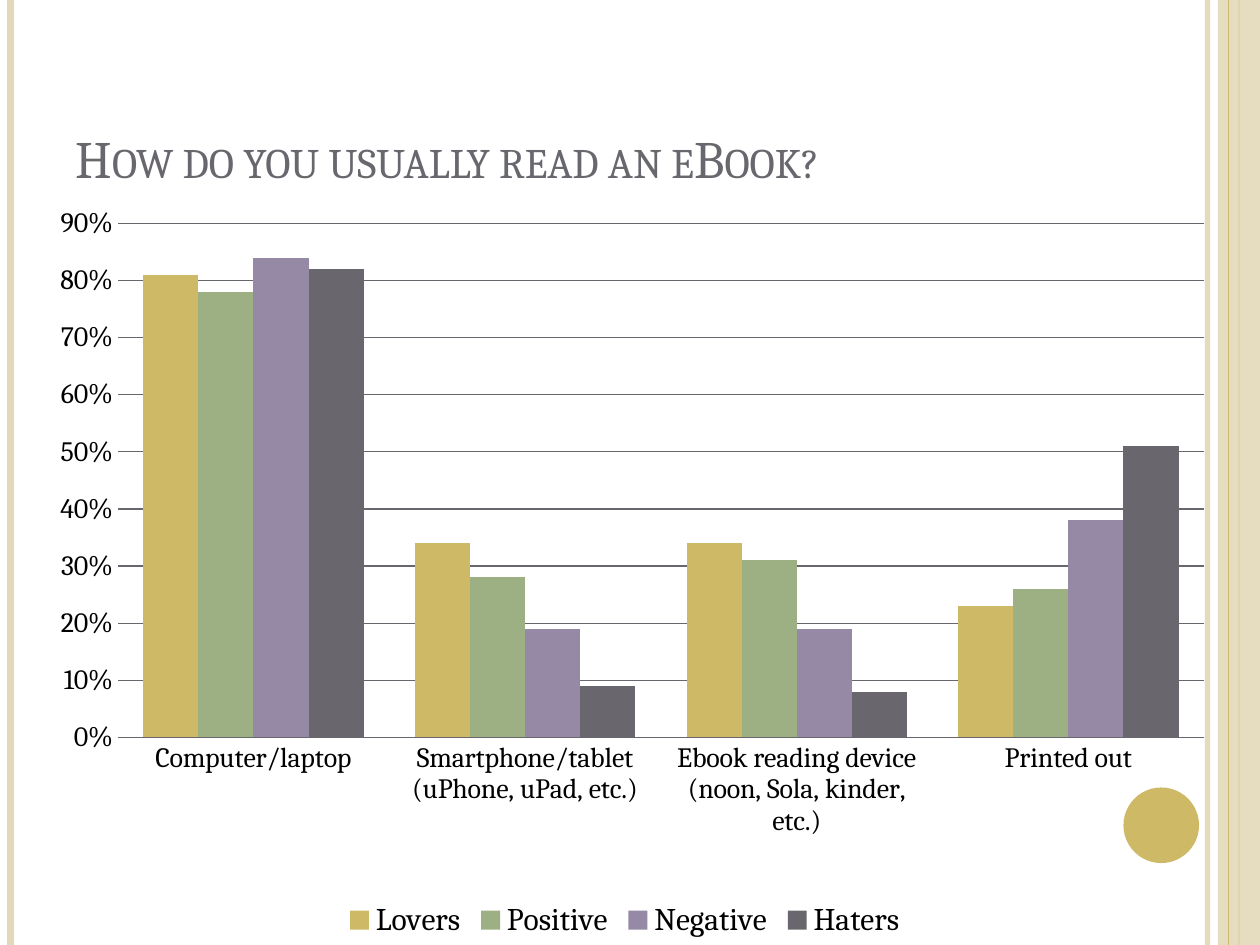
from dataclasses import dataclass

from lxml import etree
from pptx import Presentation
from pptx.chart.data import CategoryChartData
from pptx.dml.color import RGBColor
from pptx.enum.chart import XL_CHART_TYPE, XL_LEGEND_POSITION, XL_TICK_MARK
from pptx.enum.shapes import MSO_CONNECTOR, MSO_SHAPE
from pptx.enum.text import MSO_ANCHOR, MSO_AUTO_SIZE, PP_ALIGN
from pptx.oxml.ns import qn
from pptx.util import Pt

COLUMN = XL_CHART_TYPE.COLUMN_CLUSTERED
BOTTOM = XL_LEGEND_POSITION.BOTTOM
NO_TICK = XL_TICK_MARK.NONE
STRAIGHT = MSO_CONNECTOR.STRAIGHT
RECT, OVAL = MSO_SHAPE.RECTANGLE, MSO_SHAPE.OVAL
ANCHOR_BOTTOM = MSO_ANCHOR.BOTTOM
NO_AUTOSIZE = MSO_AUTO_SIZE.NONE
LEFT = PP_ALIGN.LEFT

WIDTH, HEIGHT = 720, 540


@dataclass(frozen=True)
class Theme:
    font: str = "Cambria"
    sand: str = "E3D9B8"
    gold: str = "CEB966"
    green: str = "9CB084"
    purple: str = "9689A6"
    gray: str = "69676D"
    black: str = "000000"
    title_size: int = 30
    axis_size: int = 16
    legend_size: int = 18


def rgb(value):
    return RGBColor.from_string(value)


def set_opacity(fill_parent, percent):
    for color in fill_parent.iter(qn("a:srgbClr")):
        etree.SubElement(color, qn("a:alpha"), val=str(percent * 1000))


class SlideBuilder:
    def __init__(self, slide, theme):
        self.s = slide
        self.theme = theme

    def style_font(self, font, size, color):
        font.name = self.theme.font
        font.size = Pt(size)
        font.color.rgb = rgb(color)

    def vertical_line(self, x, color, weight, opacity=100):
        line = self.s.shapes.add_connector(STRAIGHT, Pt(x), Pt(0), Pt(x), Pt(HEIGHT))
        line.line.color.rgb = rgb(color)
        line.line.width = Pt(weight)
        sp_pr = line.element.spPr
        if opacity < 100:
            set_opacity(sp_pr, opacity)
        etree.SubElement(sp_pr, qn("a:effectLst"))

    def shape(self, kind, x, y, w, h, color, opacity=100):
        sp = self.s.shapes.add_shape(kind, Pt(x), Pt(y), Pt(w), Pt(h))
        sp.shadow.inherit = False
        sp.fill.solid()
        sp.fill.fore_color.rgb = rgb(color)
        sp.line.fill.background()
        if opacity < 100:
            set_opacity(sp.element.spPr, opacity)

    def title(self, text, x, y, w, h):
        sp = self.s.shapes.title
        sp.left, sp.top, sp.width, sp.height = Pt(x), Pt(y), Pt(w), Pt(h)
        tf = sp.text_frame
        tf.word_wrap = True
        tf.auto_size = NO_AUTOSIZE
        tf.vertical_anchor = ANCHOR_BOTTOM
        p = tf.paragraphs[0]
        p.alignment = LEFT
        r = p.add_run()
        r.text = text
        self.style_font(r.font, self.theme.title_size, self.theme.gray)
        r.font.bold = False
        r.font.fill.solid()
        r.font.color.rgb = rgb(self.theme.gray)
        r._r.get_or_add_rPr().set("cap", "small")
        sp.element.getparent().append(sp.element)

    def column_chart(self, categories, series, x, y, w, h, plot_area):
        theme = self.theme
        data = CategoryChartData(number_format="0%")
        data.categories = categories
        for name, values, _ in series:
            data.add_series(name, values)
        frame = self.s.shapes.add_chart(COLUMN, Pt(x), Pt(y), Pt(w), Pt(h), data)
        chart = frame.chart
        chart.has_title = False
        self.style_font(chart.font, theme.axis_size, theme.black)

        plot = chart.plots[0]
        plot.gap_width = 93
        plot.overlap = 0
        plot.vary_by_categories = False
        for column, (_, _, color) in zip(plot.series, series):
            column.format.fill.solid()
            column.format.fill.fore_color.rgb = rgb(color)

        for axis in (chart.category_axis, chart.value_axis):
            axis.major_tick_mark = axis.minor_tick_mark = NO_TICK
            self.style_font(axis.tick_labels.font, theme.axis_size, theme.black)
        value_axis = chart.value_axis
        value_axis.minimum_scale, value_axis.maximum_scale = 0, 0.9
        value_axis.major_unit = 0.1
        value_axis.tick_labels.number_format = "0%"
        value_axis.tick_labels.number_format_is_linked = False
        value_axis.format.line.fill.background()
        value_axis.has_major_gridlines = True
        for line in (value_axis.major_gridlines.format.line, chart.category_axis.format.line):
            line.color.rgb = rgb(theme.gray)
            line.width = Pt(0.75)

        chart.has_legend = True
        chart.legend.position = BOTTOM
        chart.legend.include_in_layout = False
        self.style_font(chart.legend.font, theme.legend_size, theme.black)
        self.clear_background(chart)
        self.place_plot(chart, plot_area)

    def clear_background(self, chart):
        sp_pr = etree.Element(qn("c:spPr"))
        etree.SubElement(sp_pr, qn("a:noFill"))
        etree.SubElement(etree.SubElement(sp_pr, qn("a:ln")), qn("a:noFill"))
        chart.element.find(qn("c:txPr")).addprevious(sp_pr)

    def place_plot(self, chart, plot_area):
        area = chart.element.find(".//" + qn("c:plotArea"))
        for old in area.findall(qn("c:layout")):
            area.remove(old)
        layout = etree.Element(qn("c:layout"))
        manual = etree.SubElement(layout, qn("c:manualLayout"))
        settings = [("layoutTarget", "inner"), ("xMode", "edge"), ("yMode", "edge")]
        for tag, value in settings + list(zip("xywh", plot_area)):
            etree.SubElement(manual, qn("c:" + tag), val=str(value))
        area.insert(0, layout)


def main():
    theme = Theme()
    prs = Presentation()
    prs.slide_width, prs.slide_height = Pt(WIDTH), Pt(HEIGHT)
    builder = SlideBuilder(prs.slides.add_slide(prs.slide_layouts[5]), theme)

    builder.vertical_line(690, theme.sand, 3, opacity=93)
    builder.vertical_line(6, theme.sand, 4.5)
    builder.vertical_line(708, theme.gold, 1.5)
    builder.shape(RECT, 696, 0, 24, HEIGHT, theme.sand, opacity=87)
    builder.vertical_line(702, theme.gold, 0.75)
    builder.shape(OVAL, 642, 450, 43.2, 43.2, theme.gold)

    categories = [
        "Computer/laptop",
        "Smartphone/tablet (uPhone, uPad, etc.)",
        "Ebook reading device (noon, Sola, kinder, etc.)",
        "Printed out",
    ]
    series = [
        ("Lovers", (0.81, 0.34, 0.34, 0.23), theme.gold),
        ("Positive", (0.78, 0.28, 0.31, 0.26), theme.green),
        ("Negative", (0.84, 0.19, 0.19, 0.38), theme.purple),
        ("Haters", (0.82, 0.09, 0.08, 0.51), theme.gray),
    ]
    builder.column_chart(categories, series, 12, 66, 690, 474, (0.08, 0.13, 0.9, 0.62))
    builder.title("How do you usually read an eBook?", 36, 21.6, 588, 90)
    prs.save("out.pptx")


if __name__ == "__main__":
    main()
